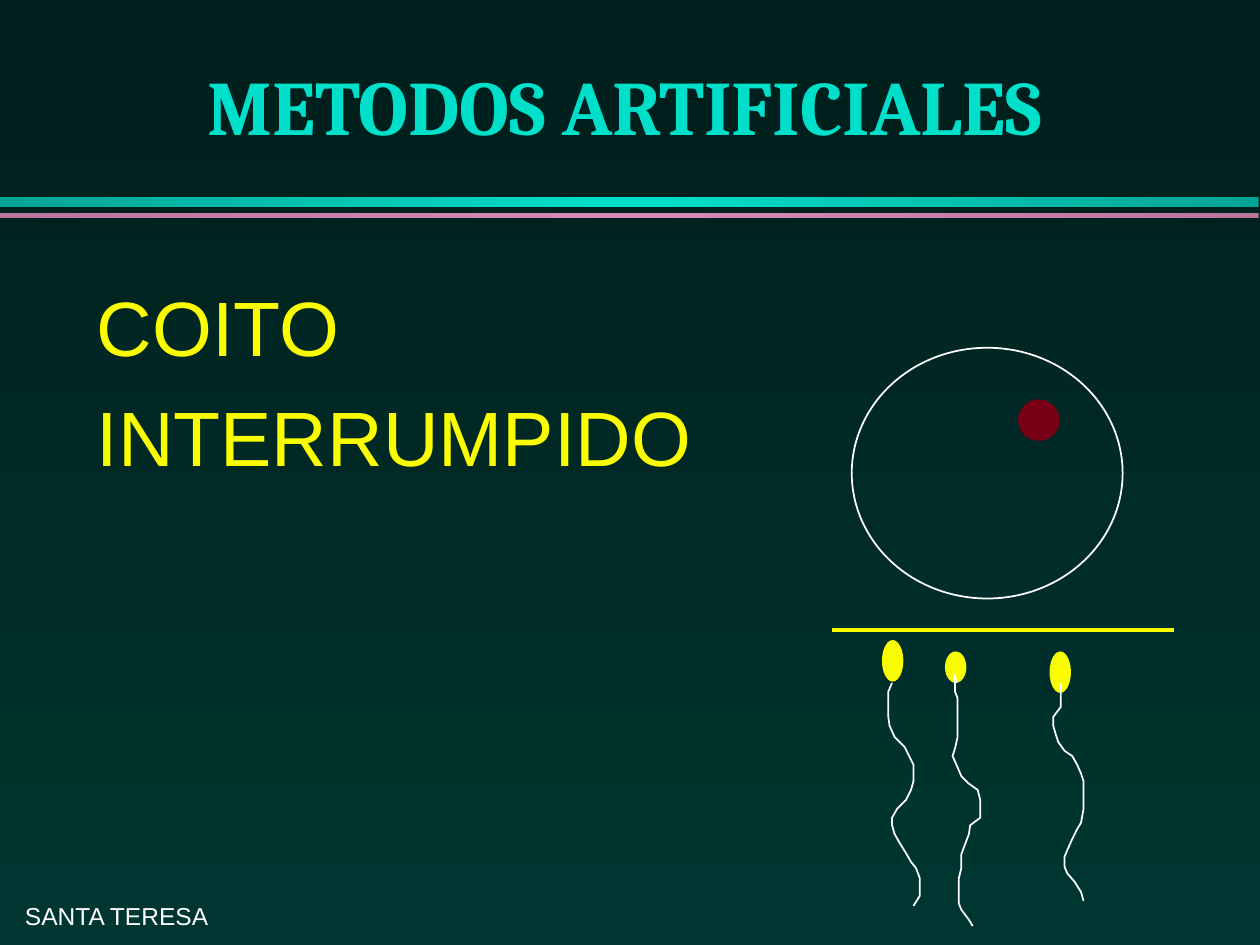
from pptx import Presentation
from pptx.dml.color import RGBColor
from pptx.enum.shapes import MSO_CONNECTOR as CONN, MSO_SHAPE as SHAPE
from pptx.enum.text import MSO_ANCHOR as ANCHOR, MSO_AUTO_SIZE as AUTO, PP_ALIGN as ALIGN
from pptx.oxml import parse_xml
from pptx.oxml.ns import nsdecls, qn
from pptx.util import Inches, Pt
from lxml import etree

THEME = {
    "white": "FFFFFF", "yellow": "FAFD00", "teal": "00DFCA", "red": "790015",
    "teal_edge": "00A595", "pink": "D989B8", "pink_edge": "BA759D",
    "bg_top": "001E1B", "bg_bottom": "003631",
    "heading_font": "Cambria", "body_font": "Arial",
    "large": 44, "small": 14, "thin": 1, "thick": 2,
}

BARS = [
    (1.56, 0.08, ("teal_edge", "teal", "teal_edge")),
    (1.69, 0.04, ("pink_edge", "pink", "pink_edge")),
]

TEXTS = [
    {"box": (0.1, 7.1, 1.73, 0.33), "lines": ["SANTA TERESA"],
     "frame": {"word_wrap": False, "vertical_anchor": ANCHOR.MIDDLE,
               "auto_size": AUTO.SHAPE_TO_FIT_TEXT},
     "para": {}, "font": {"name": THEME["body_font"], "size": Pt(THEME["small"])},
     "color": "white"},
    {"box": (0.67, 0, 8.58, 1.25), "lines": ["METODOS ARTIFICIALES"],
     "frame": {"word_wrap": True, "vertical_anchor": ANCHOR.BOTTOM},
     "para": {"alignment": ALIGN.CENTER},
     "font": {"name": THEME["heading_font"], "size": Pt(THEME["large"]), "bold": True},
     "color": "teal"},
    {"box": (0.67, 2.17, 8.58, 4.5), "lines": ["COITO", "INTERRUMPIDO"],
     "frame": {"word_wrap": True, "vertical_anchor": ANCHOR.TOP},
     "para": {"space_before": Pt(10)},
     "font": {"name": THEME["body_font"], "size": Pt(THEME["large"])},
     "color": "yellow"},
]

OVUM = (6.76, 2.76, 2.15, 1.99)
NUCLEUS = (8.08, 3.17, 0.33, 0.33)
BARRIER = (6.6, 5, 9.32, 5)

SPERM = [
    ((7, 5.08, 0.17, 0.33),
     [(7.08, 5.42), (7.05, 5.49), (7.05, 5.69), (7.06, 5.76), (7.1, 5.85),
      (7.18, 5.93), (7.25, 6.07), (7.25, 6.2), (7.23, 6.27), (7.19, 6.35),
      (7.12, 6.42), (7.08, 6.49), (7.08, 6.55), (7.1, 6.62), (7.14, 6.69),
      (7.19, 6.77), (7.23, 6.84), (7.27, 6.89), (7.3, 6.97), (7.3, 7.11),
      (7.25, 7.19)]),
    ((8.33, 5.17, 0.17, 0.33),
     [(8.42, 5.42), (8.42, 5.61), (8.36, 5.69), (8.36, 5.76), (8.38, 5.83),
      (8.4, 5.89), (8.45, 5.96), (8.51, 6), (8.55, 6.07), (8.58, 6.14),
      (8.6, 6.2), (8.6, 6.42), (8.58, 6.53), (8.55, 6.58), (8.51, 6.66),
      (8.47, 6.75), (8.45, 6.8), (8.45, 6.88), (8.47, 6.93), (8.53, 7),
      (8.58, 7.08), (8.6, 7.15)]),
    ((7.5, 5.17, 0.17, 0.25),
     [(7.59, 5.42), (7.58, 5.36), (7.58, 5.49), (7.6, 5.54), (7.6, 5.85),
      (7.58, 5.94), (7.56, 6), (7.6, 6.09), (7.63, 6.16), (7.69, 6.22),
      (7.76, 6.27), (7.78, 6.35), (7.78, 6.49), (7.7, 6.55), (7.69, 6.62),
      (7.63, 6.78), (7.63, 6.89), (7.61, 6.97), (7.61, 7.17), (7.63, 7.22),
      (7.69, 7.3), (7.72, 7.35)]),
]


def rgb(name):
    return RGBColor.from_string(THEME[name])


def set_gradient(fill, colors, angle):
    fill.gradient()
    fill.gradient_angle = angle
    stops = fill._fill._gradFill.find(qn("a:gsLst"))
    for stop in list(stops):
        stops.remove(stop)
    for i, name in enumerate(colors):
        pos = 100000 * i // (len(colors) - 1)
        stops.append(parse_xml(
            f'<a:gs {nsdecls("a")} pos="{pos}"><a:srgbClr val="{THEME[name]}"/></a:gs>'))


def set_line(line, color, width):
    line.color.rgb = rgb(color)
    line.width = Pt(THEME[width])


def style(sp, fill=None, line=None):
    sp.shadow.inherit = False
    if fill:
        sp.fill.solid()
        sp.fill.fore_color.rgb = rgb(fill)
    else:
        sp.fill.background()
    if line:
        set_line(sp.line, line, "thin")
    else:
        sp.line.fill.background()


def add_shape(s, kind, box, **colors):
    sp = s.shapes.add_shape(kind, *map(Inches, box))
    style(sp, **colors)
    return sp


def add_text(s, item):
    tf = s.shapes.add_textbox(*map(Inches, item["box"])).text_frame
    for key, value in item["frame"].items():
        setattr(tf, key, value)
    for i, text in enumerate(item["lines"]):
        p = tf.add_paragraph() if i else tf.paragraphs[0]
        for key, value in item["para"].items():
            setattr(p, key, value)
        r = p.add_run()
        r.text = text
        for key, value in item["font"].items():
            setattr(r.font, key, value)
        r.font.color.rgb = rgb(item["color"])


def add_tail(s, points):
    start, *rest = [(Inches(x), Inches(y)) for x, y in points]
    builder = s.shapes.build_freeform(*start)
    builder.add_line_segments(rest, close=False)
    style(builder.convert_to_shape(), line="white")


def main():
    prs = Presentation()
    prs.slide_width, prs.slide_height = Inches(10), Inches(7.5)
    s = prs.slides.add_slide(prs.slide_layouts[6])
    set_gradient(s.background.fill, ("bg_top", "bg_bottom"), 270)

    for top, height, colors in BARS:
        sp = add_shape(s, SHAPE.RECTANGLE, (0, top, 9.99, height))
        set_gradient(sp.fill, colors, 0)
    for item in TEXTS:
        add_text(s, item)

    add_shape(s, SHAPE.OVAL, OVUM, line="white")
    add_shape(s, SHAPE.OVAL, NUCLEUS, fill="red")
    barrier = s.shapes.add_connector(CONN.STRAIGHT, *map(Inches, BARRIER))
    set_line(barrier.line, "yellow", "thick")
    etree.SubElement(barrier._element.spPr, qn("a:effectLst"))
    for head, tail in SPERM:
        add_shape(s, SHAPE.OVAL, head, fill="yellow")
        add_tail(s, tail)

    prs.save("out.pptx")


if __name__ == "__main__":
    main()
